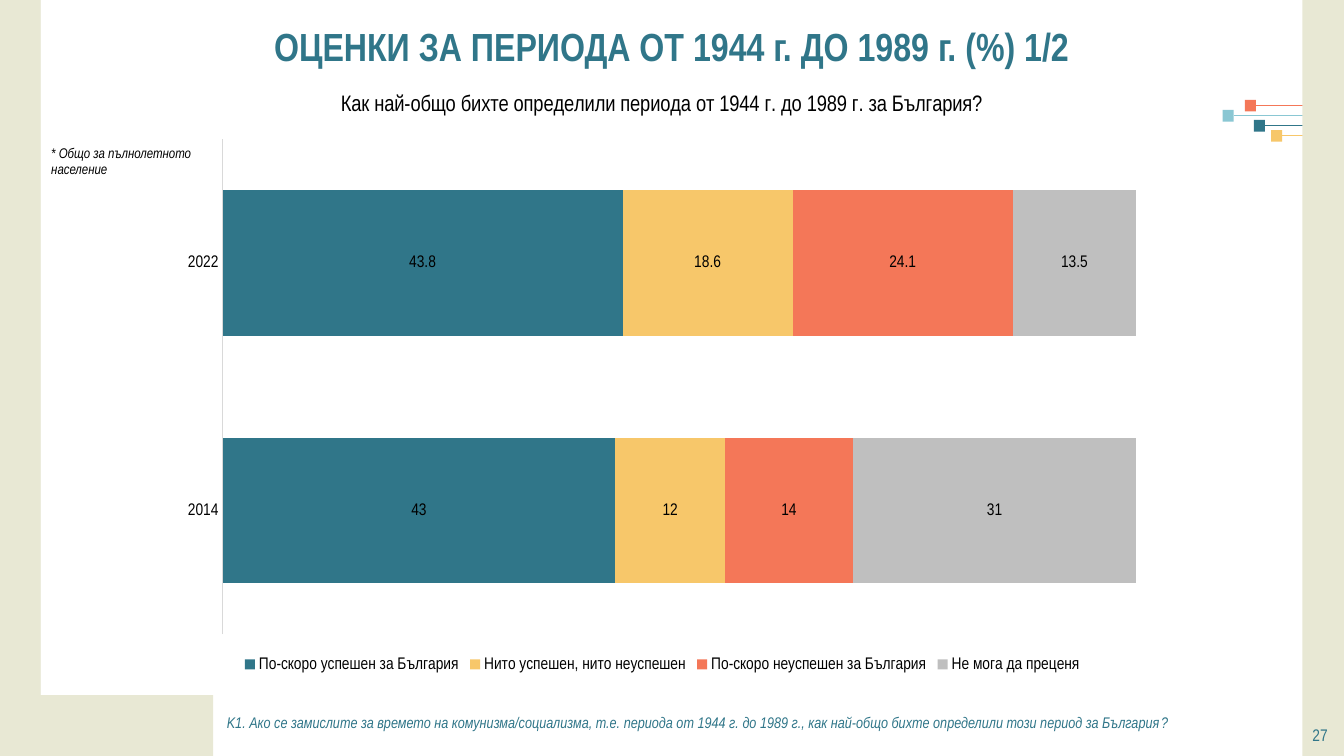
from dataclasses import dataclass

from lxml.etree import SubElement
from pptx import Presentation
from pptx.chart.data import CategoryChartData
from pptx.dml.color import RGBColor
from pptx.enum.chart import XL_CHART_TYPE as ChartType, XL_LEGEND_POSITION as LegendPos
from pptx.enum.chart import XL_TICK_LABEL_POSITION as LabelPos, XL_TICK_MARK as Tick
from pptx.enum.lang import MSO_LANGUAGE_ID as Lang
from pptx.enum.shapes import MSO_CONNECTOR as Connector, MSO_SHAPE as Shape
from pptx.enum.text import MSO_ANCHOR as Anchor, MSO_AUTO_SIZE as AutoSize, PP_ALIGN as Align
from pptx.oxml import parse_xml
from pptx.oxml.ns import nsdecls, qn
from pptx.util import Inches, Pt

# The slide is a grid of 160 columns and 90 rows, twelve to the inch
COLS, ROWS = 160, 90
UNIT = Inches(1) / 12


@dataclass(frozen=True)
class Theme:
    font: str = "Arial Narrow"
    teal: str = "307689"
    yellow: str = "F7C76A"
    coral: str = "F47758"
    sky: str = "8AC7D3"
    gray: str = "BFBFBF"
    axis: str = "D9D9D9"
    beige: str = "E8E8D4"
    white: str = "FFFFFF"
    ink: str = "000000"
    title: int = 28
    heading: int = 16
    label: int = 12
    source: int = 11
    note: int = 10


@dataclass(frozen=True)
class Box:
    col: float
    row: float
    cols: float = 0
    rows: float = 0

    def emu(self) -> tuple[int, ...]:
        return tuple(grid(n) for n in (self.col, self.row, self.cols, self.rows))


@dataclass(frozen=True)
class Panel:
    box: Box
    color: str


@dataclass(frozen=True)
class Marker:
    col: float
    color: str


@dataclass(frozen=True)
class Answer:
    name: str
    values: tuple[float, float]
    color: str


T = Theme()
PANELS = (Panel(Box(0, 0, 25.38, ROWS), T.beige), Panel(Box(4.8, 0, 21.84, 82.74), T.white))
STRIPS = (Panel(Box(155.04, 0, 4.96, ROWS), T.beige), Panel(Box(0, 0, 4.84, 82.74), T.beige))
MARKERS = (Marker(148.2, T.coral), Marker(145.56, T.sky),
           Marker(149.28, T.teal), Marker(151.32, T.yellow))
MARKER_TOP, MARKER_STEP, MARKER_W, MARKER_H, LINE_END = 11.88, 1.2, 1.32, 1.4, 159
CHART = Box(20.04, 9.48, 117.48, 71.16)
QUESTION, BARS, LEGEND = Box(40.1, 10.65), Box(26.49, 16.6, 108.77, 58.9), Box(28.5, 77.68)
YEARS = ("2014", "2022")
ANSWERS = (
    Answer("По-скоро успешен за България", (43, 43.8), T.teal),
    Answer("Нито успешен, нито неуспешен", (12, 18.6), T.yellow),
    Answer("По-скоро неуспешен за България", (14, 24.1), T.coral),
    Answer("Не мога да преценя", (31, 13.5), T.gray),
)


def grid(n: float) -> int:
    return round(n * UNIT)


def style(font, size: int, color: str = T.ink, **extra) -> None:
    values = {"name": T.font, "size": Pt(size), "bold": False, "italic": False, **extra}
    for key, value in values.items():
        setattr(font, key, value)
    font.color.rgb = RGBColor.from_string(color)


def paint(fill, color: str) -> None:
    fill.solid()
    fill.fore_color.rgb = RGBColor.from_string(color)


def add_rect(s, box: Box, color: str):
    sp = s.shapes.add_shape(Shape.RECTANGLE, *box.emu())
    sp.shadow.inherit = False
    paint(sp.fill, color)
    sp.line.fill.background()
    return sp


def add_marker(s, marker: Marker, row: float) -> None:
    sp = add_rect(s, Box(marker.col, row, MARKER_W, MARKER_H), marker.color)
    y = grid(row + MARKER_H / 2)
    line = s.shapes.add_connector(Connector.STRAIGHT, grid(marker.col + MARKER_W), y,
                                  grid(LINE_END), y)
    line.begin_connect(sp, 3)
    line.line.width = Pt(0.75)
    line.line.color.rgb = RGBColor.from_string(marker.color)
    SubElement(line._element.spPr, qn("a:effectLst"))


def write(sp, box: Box, text: str, size: int, color: str, align=Align.LEFT,
          anchor=Anchor.TOP, spacing: float = 1, mark: str = "", **extra) -> None:
    sp.left, sp.top, sp.width, sp.height = box.emu()
    tf = sp.text_frame
    for key, value in {"word_wrap": True, "auto_size": AutoSize.NONE,
                       "vertical_anchor": anchor}.items():
        setattr(tf, key, value)
    p = tf.paragraphs[0]
    for key, value in {"alignment": align, "line_spacing": spacing,
                       "space_before": Pt(0)}.items():
        setattr(p, key, value)
    for part, lang in ((text, Lang.BULGARIAN), (mark, Lang.ENGLISH_US)):
        if part:
            r = p.add_run()
            r.text = part
            style(r.font, size, color, language_id=lang, **extra)


def remove_bullet(p) -> None:
    pPr = p._p.get_or_add_pPr()
    pPr.set("marL", "0")
    pPr.set("indent", "0")
    SubElement(pPr, qn("a:buNone"))


def place(parent, box: Box, after: str = "") -> None:
    """Put a chart part at a box of the slide's grid."""
    for old in parent.findall(qn("c:layout")):
        parent.remove(old)
    shares = {"x": (box.col - CHART.col) / CHART.cols, "y": (box.row - CHART.row) / CHART.rows}
    if box.cols:
        shares |= {"w": box.cols / CHART.cols, "h": box.rows / CHART.rows}
    target = '<c:layoutTarget val="inner"/>' if box.cols else ""
    modes = "".join(f'<c:{k}Mode val="edge"/>' for k in "xy")
    sizes = "".join(f'<c:{k} val="{v:.4f}"/>' for k, v in shares.items())
    layout = parse_xml(f'<c:layout {nsdecls("c")}><c:manualLayout>{target}{modes}{sizes}'
                       "</c:manualLayout></c:layout>")
    if after:
        parent.find(qn(after)).addnext(layout)
    else:
        parent.insert(0, layout)


def add_answers_chart(s) -> None:
    data = CategoryChartData()
    data.categories = YEARS
    for answer in ANSWERS:
        data.add_series(answer.name, answer.values)
    chart = s.shapes.add_chart(ChartType.BAR_STACKED_100, *CHART.emu(), data).chart
    style(chart.font, T.note)

    # Question above the bars
    chart.has_title = True
    r = chart.chart_title.text_frame.paragraphs[0].add_run()
    r.text = "Как най-общо бихте определили периода от 1944 г. до 1989 г. за България?"
    style(r.font, T.heading)
    place(chart.chart_title._element, QUESTION, "c:tx")

    # Bars and their values
    plot = chart.plots[0]
    plot.gap_width, plot.overlap, plot.vary_by_categories = 70, 100, False
    for series, answer in zip(plot.series, ANSWERS):
        paint(series.format.fill, answer.color)
        series.data_labels.show_value = True
        style(series.data_labels.font, T.label)
    place(chart._chartSpace.chart.plotArea, BARS)

    # Axes
    axis = chart.category_axis
    axis.major_tick_mark = axis.minor_tick_mark = Tick.NONE
    axis.tick_label_position = LabelPos.NEXT_TO_AXIS
    axis.format.line.width = Pt(0.75)
    axis.format.line.color.rgb = RGBColor.from_string(T.axis)
    style(axis.tick_labels.font, T.label)
    chart.value_axis.visible = False
    chart.value_axis.has_major_gridlines = False

    # Legend
    chart.has_legend = True
    legend = chart.legend
    legend.position, legend.include_in_layout = LegendPos.BOTTOM, False
    style(legend.font, T.label)
    place(legend._element, LEGEND, "c:legendPos")


def main() -> None:
    prs = Presentation()
    prs.slide_width, prs.slide_height = grid(COLS), grid(ROWS)
    s = prs.slides.add_slide(prs.slide_layouts[1])
    title, body = s.placeholders

    # Panels, coloured markers and side strips
    for panel in PANELS:
        add_rect(s, panel.box, panel.color)
    for i, marker in enumerate(MARKERS):
        add_marker(s, marker, MARKER_TOP + i * MARKER_STEP)
    for strip in STRIPS:
        add_rect(s, strip.box, strip.color)
    for holder in (title, body):
        s.shapes._spTree.append(holder._element)

    # Title, survey question and slide number
    write(title, Box(6, 0.96, 147.84, 9.72), "ОЦЕНКИ ЗА ПЕРИОДА ОТ 1944 г. ДО 1989 г. (%) 1/2",
          T.title, T.teal, Align.CENTER, Anchor.MIDDLE, 0.9, bold=True)
    remove_bullet(body.text_frame.paragraphs[0])
    write(body, Box(25.8, 84.48, 124.8, 5.28),
          "K1. Ако се замислите за времето на комунизма/социализма, т.е. периода от 1944 г. "
          "до 1989 г., как най-общо бихте определили този период за България",
          T.source, T.teal, spacing=0.9, mark="?", italic=True)
    number = Box(153.84, 85.08, 5.4, 4.8)
    write(s.shapes.add_textbox(*number.emu()), number, "27", T.label, T.teal,
          Align.RIGHT, Anchor.MIDDLE)

    # Chart and its note
    add_answers_chart(s)
    note = Box(4.92, 16.56, 23.88, 5.28)
    write(s.shapes.add_textbox(*note.emu()), note, "* Общо за пълнолетното население",
          T.note, T.ink, italic=True)
    prs.save("out.pptx")


if __name__ == "__main__":
    main()
